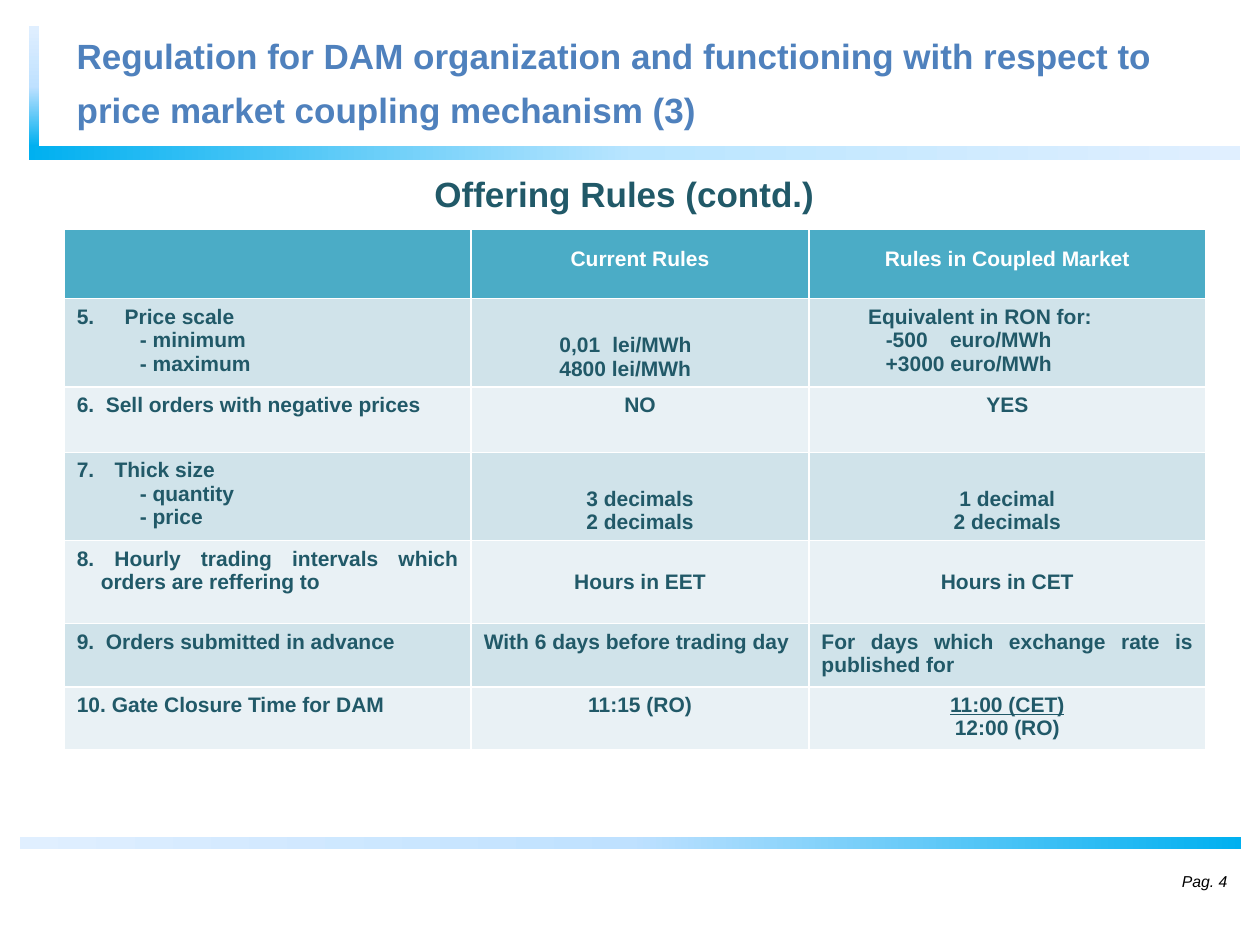
from copy import deepcopy
from dataclasses import dataclass

from lxml import etree
from pptx import Presentation
from pptx import util as u
from pptx.dml.color import RGBColor
from pptx.enum import shapes, text
from pptx.oxml.ns import qn

LEFT, CENTER, RIGHT, JUSTIFY = (
    text.PP_ALIGN.LEFT, text.PP_ALIGN.CENTER, text.PP_ALIGN.RIGHT, text.PP_ALIGN.JUSTIFY)
TOP, MIDDLE, BOTTOM = (
    text.MSO_ANCHOR.TOP, text.MSO_ANCHOR.MIDDLE, text.MSO_ANCHOR.BOTTOM)


@dataclass(frozen=True)
class Theme:
    font: str = "Arial"
    title: str = "4F81BD"
    body: str = "215968"
    black: str = "000000"
    white: str = "FFFFFF"
    header: str = "4BACC6"
    bands: tuple = ("D0E3EA", "E9F1F5")
    top_bar: tuple = ("00B0F0", "B9E5FF", "E0EFFF")
    other_bars: tuple = ("00B0F0", "BFE1FF", "E0EFFF")
    heading_size: int = 20
    table_size: int = 12
    footer_size: int = 9


@dataclass(frozen=True)
class Line:
    """One paragraph; left and first are its indents in inches."""
    words: str
    align: int = CENTER
    left: float = 0
    first: float = 0
    number: int = 0
    underline: bool = False
    spacing: float = 1


@dataclass(frozen=True)
class Entry:
    """The content of one table cell."""
    lines: tuple = ()
    anchor: int = TOP


def entry(*words, anchor=TOP):
    return Entry(tuple(Line(line) for line in words), anchor)


def label(words, hang=0.0, number=0, details=()):
    """First-column cell, with optional dashed details below it."""
    first = Line(words, JUSTIFY, hang, -hang, number)
    return Entry((first, *(Line(f"- {item}", JUSTIFY, 0.5) for item in details)))


COLUMNS = (3.23, 2.68, 3.15)
HEADER_HEIGHT = 0.55
HEADERS = ("", "Current Rules", "Rules in Coupled Market")
RULES = (
    (0.66,
     label("Price scale", 0.38, 5, ("minimum", "maximum")),
     Entry((Line("0,01\tlei/MWh", LEFT, 1.02, -0.42),
            Line("4800 lei/MWh", LEFT, 0.6)), BOTTOM),
     Entry((Line("Equivalent in RON for:", JUSTIFY, 0.37),
            Line("-500\teuro/MWh", LEFT, 1.02, -0.51),
            Line("+3000 euro/MWh", LEFT, 0.51)))),
    (0.52, label("Sell orders with negative prices", 0.23, 6),
     entry("NO"), entry("YES")),
    (0.66, label("Thick size", 0.3, 7, ("quantity", "price")),
     entry("3 decimals", "2 decimals", anchor=BOTTOM),
     entry("1 decimal", "2 decimals", anchor=BOTTOM)),
    (0.66, label("8. Hourly trading intervals which orders are reffering to", 0.19),
     entry("Hours in EET", anchor=MIDDLE), entry("Hours in CET", anchor=MIDDLE)),
    (0.47, label("Orders submitted in advance", 0.23, 9),
     Entry((Line("With 6 days before trading day", LEFT),)),
     Entry((Line("For days which exchange rate is published for", JUSTIFY),))),
    (0.48, label("10. Gate Closure Time for DAM"),
     entry("11:15 (RO)"),
     Entry((Line("11:00 (CET)", underline=True), Line("12:00 (RO)")))),
)


class Page:
    def __init__(self, slide, theme):
        self.slide = slide
        self.theme = theme

    def add_lines(self, frame, lines, size, color, bold=True, italic=False):
        for index, line in enumerate(lines):
            para = frame.paragraphs[0] if index == 0 else frame.add_paragraph()
            para.text = line.words
            para.alignment = line.align
            para.line_spacing = line.spacing
            properties = para._p.get_or_add_pPr()
            properties.set("marL", str(u.Inches(line.left)))
            properties.set("indent", str(u.Inches(line.first)))
            if line.number:
                etree.SubElement(properties, qn("a:buAutoNum"),
                                 type="arabicPeriod", startAt=str(line.number))
            font = para.font
            font.name, font.size = self.theme.font, u.Pt(size)
            font.bold, font.italic = bold, italic
            font.color.rgb = RGBColor.from_string(color)
            if line.underline:
                font.underline = True

    def text_box(self, area, line, size, color, anchor=TOP, **style):
        box = self.slide.shapes.add_textbox(*map(u.Inches, area))
        frame = box.text_frame
        frame.word_wrap = True
        frame.vertical_anchor = anchor
        self.add_lines(frame, [line], size, color, **style)
        return box

    def gradient_bar(self, area, colors, angle):
        bar = self.slide.shapes.add_shape(
            shapes.MSO_SHAPE.RECTANGLE, *map(u.Inches, area))
        bar.shadow.inherit = False
        bar.line.fill.background()
        bar.fill.gradient()
        bar.fill.gradient_angle = angle
        stop_list = bar._element.spPr.find(".//" + qn("a:gsLst"))
        stop_list.insert(1, deepcopy(stop_list[0]))
        for index, (stop, color) in enumerate(zip(bar.fill.gradient_stops, colors)):
            stop.position = index / 2
            stop.color.rgb = RGBColor.from_string(color)

    def cell(self, cell, content, fill, color):
        self.borders(cell)
        cell.fill.solid()
        cell.fill.fore_color.rgb = RGBColor.from_string(fill)
        cell.vertical_anchor = content.anchor
        self.add_lines(cell.text_frame, content.lines, self.theme.table_size, color)

    def borders(self, cell):
        properties = cell._tc.get_or_add_tcPr()
        for side in ("lnL", "lnR", "lnT", "lnB"):
            edge = etree.SubElement(properties, qn(f"a:{side}"), w=str(u.Pt(1)))
            paint = etree.SubElement(edge, qn("a:solidFill"))
            etree.SubElement(paint, qn("a:srgbClr"), val=self.theme.white)

    def table(self, left, top):
        theme = self.theme
        heights = (HEADER_HEIGHT, *(rule[0] for rule in RULES))
        table = self.slide.shapes.add_table(
            len(heights), len(COLUMNS), u.Inches(left), u.Inches(top),
            u.Inches(sum(COLUMNS)), u.Inches(sum(heights))).table
        table.horz_banding = False
        for column, width in zip(table.columns, COLUMNS):
            column.width = u.Inches(width)
        for row, height in zip(table.rows, heights):
            row.height = u.Inches(height)
        for index, words in enumerate(HEADERS):
            lines = (Line(words, spacing=1.5),) if words else ()
            self.cell(table.cell(0, index), Entry(lines), theme.header, theme.white)
        for number, (_, *entries) in enumerate(RULES):
            for index, content in enumerate(entries):
                self.cell(table.cell(number + 1, index), content,
                          theme.bands[number % 2], theme.body)


def main():
    deck = Presentation()
    deck.slide_width, deck.slide_height = u.Inches(10), u.Inches(7.5)
    theme = Theme()
    page = Page(deck.slides.add_slide(deck.slide_layouts[6]), theme)

    page.gradient_bar((0.23, 1.16, 9.61, 0.11), theme.top_bar, 0)
    page.gradient_bar((0.23, 0.21, 0.08, 0.95), theme.other_bars, 90)
    page.gradient_bar((0.16, 6.64, 9.69, 0.1), theme.other_bars, 180)
    page.text_box((8.75, 6.79, 1.09, 0.4), Line("Pag. 4", RIGHT),
                  theme.footer_size, theme.black, MIDDLE, bold=False, italic=True)
    subtitle = page.text_box((3.35, 1.32, 6.06, 0.46), Line("Offering Rules (contd.)", LEFT),
                             theme.heading_size, theme.body)
    subtitle.fill.solid()
    subtitle.fill.fore_color.rgb = RGBColor.from_string(theme.white)
    page.table(0.51, 1.82)
    page.text_box(
        (0.51, 0.21, 9.29, 0.79),
        Line("Regulation for DAM organization and functioning with respect to "
             "price market coupling mechanism (3)", LEFT, spacing=1.28),
        theme.heading_size, theme.title, MIDDLE)
    deck.save("out.pptx")


if __name__ == "__main__":
    main()
